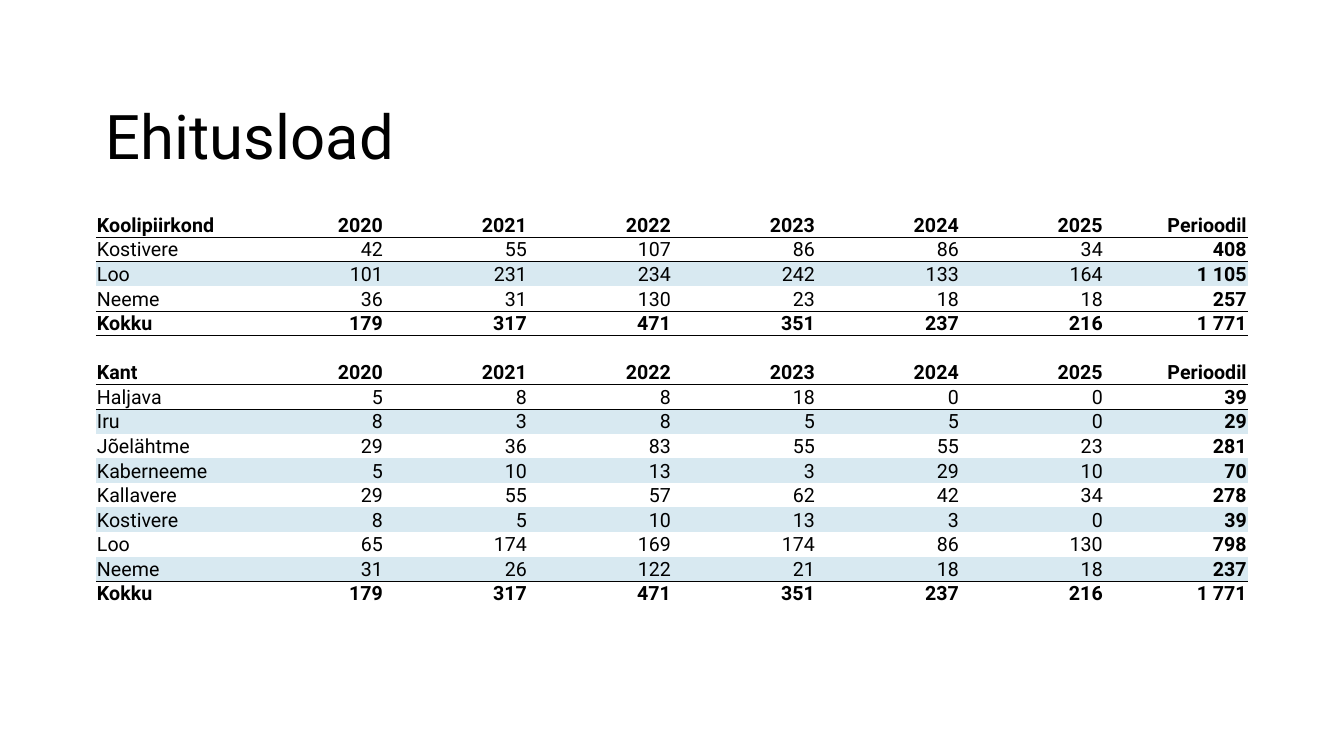
from lxml.etree import SubElement
from pptx import Presentation
from pptx.dml.color import RGBColor
from pptx.enum.text import MSO_ANCHOR, PP_ALIGN
from pptx.oxml.ns import qn
from pptx.util import Inches, Pt

COLORS = {"ink": "000000", "band": "D8E9F1"}
GRID_COLUMNS, GRID_ROWS = 14, 150
NO_STYLE = "{2D5ABB26-0587-4C30-8999-92F81FD0307C}"
YEARS = ["2020", "2021", "2022", "2023", "2024", "2025", "Perioodil"]
TOTAL = ["Kokku", 179, 317, 471, 351, 237, 216, "1 771"]
DISTRICTS = [
    ["Kostivere", 42, 55, 107, 86, 86, 34, 408],
    ["Loo", 101, 231, 234, 242, 133, 164, "1 105"],
    ["Neeme", 36, 31, 130, 23, 18, 18, 257],
]
AREAS = [
    ["Haljava", 5, 8, 8, 18, 0, 0, 39],
    ["Iru", 8, 3, 8, 5, 5, 0, 29],
    ["Jõelähtme", 29, 36, 83, 55, 55, 23, 281],
    ["Kaberneeme", 5, 10, 13, 3, 29, 10, 70],
    ["Kallavere", 29, 55, 57, 62, 42, 34, 278],
    ["Kostivere", 8, 5, 10, 13, 3, 0, 39],
    ["Loo", 65, 174, 169, 174, 86, 130, 798],
    ["Neeme", 31, 26, 122, 21, 18, 18, 237],
]


class PermitSlide:
    """Holds the slide, its grid and its text style."""

    def __init__(self, presentation):
        self.font = "Roboto"
        self.column = presentation.slide_width / GRID_COLUMNS
        self.row = presentation.slide_height / GRID_ROWS
        self.slide = presentation.slides.add_slide(presentation.slide_layouts[6])

    def place(self, left, top, width, height):
        return (round(left * self.column), round(top * self.row),
                round(width * self.column), round(height * self.row))

    def add_text(self, paragraph, text, size, bold=False):
        run = paragraph.add_run()
        run.text = str(text)
        run.font.name = self.font
        run.font.size = Pt(size)
        run.font.bold = bold
        run.font.color.rgb = RGBColor.from_string(COLORS["ink"])

    def title(self, text, area):
        frame = self.slide.shapes.add_textbox(*self.place(*area)).text_frame
        frame.word_wrap = True
        frame.vertical_anchor = MSO_ANCHOR.MIDDLE
        paragraph = frame.paragraphs[0]
        paragraph.line_spacing = 0.9
        self.add_text(paragraph, text, 44)

    def border(self, cell, side):
        line = SubElement(cell._tc.get_or_add_tcPr(), qn(f"a:{side}"), w=str(Pt(0.5)))
        fill = SubElement(line, qn("a:solidFill"))
        SubElement(fill, qn("a:srgbClr"), val=COLORS["ink"])

    def cell(self, cell, text, size, bold, align, sides, shaded):
        cell.margin_left = cell.margin_right = cell.margin_top = Inches(0.01)
        cell.margin_bottom = 0
        cell.vertical_anchor = MSO_ANCHOR.BOTTOM
        for side in sides:
            self.border(cell, side)
        if shaded:
            cell.fill.solid()
            cell.fill.fore_color.rgb = RGBColor.from_string(COLORS["band"])
        else:
            cell.fill.background()
        paragraph = cell.text_frame.paragraphs[0]
        paragraph.alignment = align
        if text == "":
            SubElement(paragraph._p, qn("a:endParaRPr"), sz=str(size * 100))
        else:
            self.add_text(paragraph, text, size, bold)

    def table(self, sections, area, size=14):
        rows = []
        for heading, body in sections:
            if rows:
                rows.append(([""] * len(TOTAL), False, [], False))
            rows.append(([heading] + YEARS, True, ["lnB"], False))
            for index, values in enumerate(body):
                sides = ["lnT"] if index == 0 else []
                if index == len(body) - 1:
                    sides.append("lnB")
                rows.append((values, False, sides, index % 2 == 1))
            rows.append((TOTAL, True, ["lnT"], False))
        left, top, width, height = self.place(*area)
        table = self.slide.shapes.add_table(
            len(rows), len(TOTAL), left, top, width, height).table
        table.first_row = table.horz_banding = False
        table._tbl.tblPr.find(qn("a:tableStyleId")).text = NO_STYLE
        for row_index, (values, bold, sides, shaded) in enumerate(rows):
            for column, value in enumerate(values):
                align = PP_ALIGN.RIGHT if column else PP_ALIGN.LEFT
                is_bold = bold or column == len(values) - 1
                self.cell(table.cell(row_index, column), value, size, is_bold,
                          align, sides, shaded)


def main():
    presentation = Presentation()
    presentation.slide_width = Inches(13.33)
    presentation.slide_height = Inches(7.5)
    permits = PermitSlide(presentation)
    permits.title("Ehitusload", (1, 13.2, 12, 29))
    permits.table([("Koolipiirkond", DISTRICTS), ("Kant", AREAS)], (1, 42.2, 12, 76.2))
    presentation.save("out.pptx")


if __name__ == "__main__":
    main()
